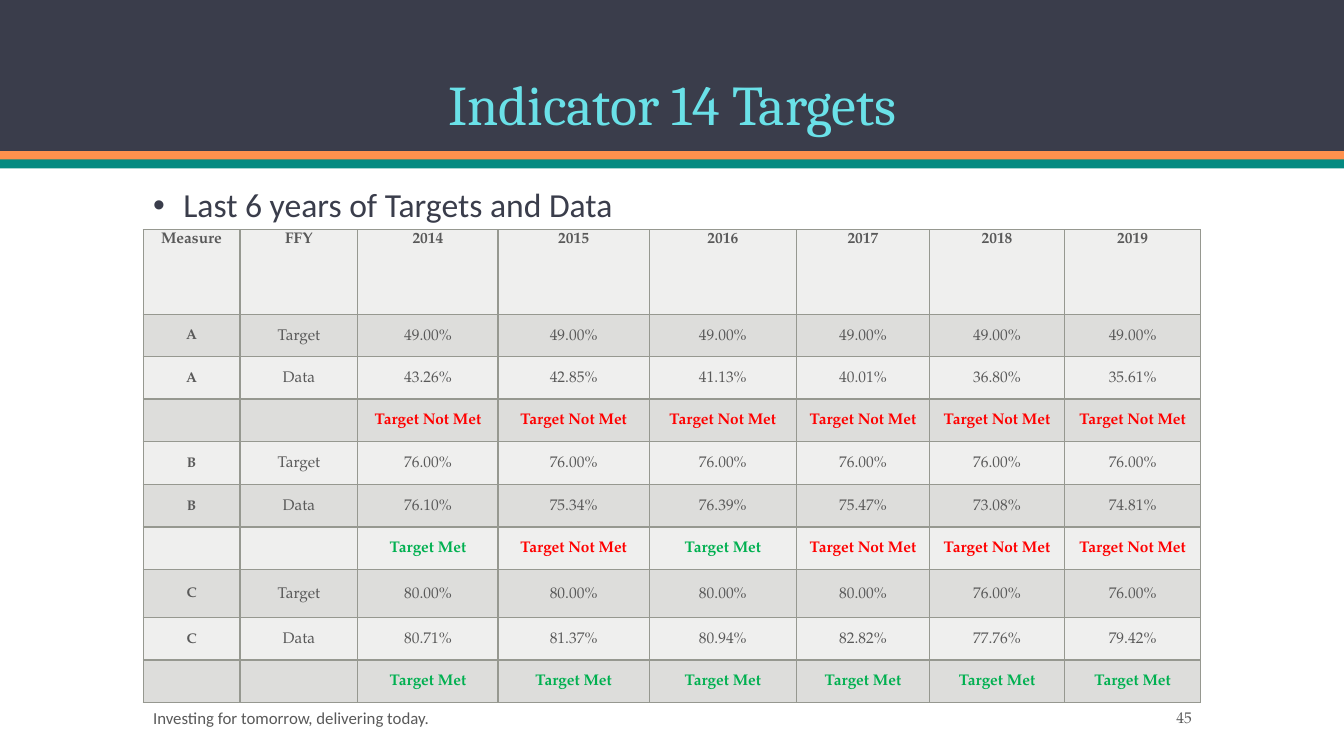
from dataclasses import dataclass

from lxml import etree
from pptx import Presentation
from pptx.dml.color import RGBColor
from pptx.enum.shapes import MSO_SHAPE
from pptx.enum.text import MSO_ANCHOR, PP_ALIGN
from pptx.oxml.ns import qn
from pptx.util import Inches, Pt

RECT = MSO_SHAPE.RECTANGLE
TOP, MIDDLE, BOTTOM = MSO_ANCHOR.TOP, MSO_ANCHOR.MIDDLE, MSO_ANCHOR.BOTTOM
LEFT, CENTER, RIGHT = PP_ALIGN.LEFT, PP_ALIGN.CENTER, PP_ALIGN.RIGHT


@dataclass(frozen=True)
class Theme:
    """Fonts, colours and type sizes of the slide."""

    title_font: str = "Cambria"
    body_font: str = "Calibri"
    table_font: str = "TeX Gyre Pagella"
    navy: str = "3A3D4B"
    orange: str = "FF914D"
    teal: str = "048A81"
    aqua: str = "6AE1E8"
    grey: str = "595959"
    border: str = "969890"
    bands: tuple = ("EFEFEE", "DDDDDB")
    met: str = "00B050"
    not_met: str = "FF0000"
    title_size: float = 40
    body_size: float = 24
    footer_size: float = 12
    table_size: float = 11
    measure_size: float = 10


MARGIN, WIDTH = 1.42, 10.5
COLS = [0.96, 1.17, 1.39, 1.5, 1.46, 1.32, 1.34, 1.35]
ROWS = [0.84, 0.42, 0.42, 0.42, 0.43, 0.42, 0.42, 0.48, 0.42, 0.42]
YEARS = range(2014, 2020)
MEASURES = {
    "A": ([49] * 6, [43.26, 42.85, 41.13, 40.01, 36.80, 35.61]),
    "B": ([76] * 6, [76.10, 75.34, 76.39, 75.47, 73.08, 74.81]),
    "C": ([80] * 4 + [76] * 2, [80.71, 81.37, 80.94, 82.82, 77.76, 79.42]),
}


class Deck:
    """Draws elements on the current slide in one theme."""

    def __init__(self, theme):
        self.theme = theme
        self.prs = Presentation()
        self.prs.slide_width, self.prs.slide_height = Inches(13.33), Inches(7.5)
        self.slide = self.prs.slides.add_slide(self.prs.slide_layouts[6])

    def bar(self, y, h, color):
        """Add a full-width bar."""
        sp = self.slide.shapes.add_shape(
            RECT, 0, Inches(y), self.prs.slide_width, Inches(h))
        sp.shadow.inherit = False
        sp.fill.solid()
        sp.fill.fore_color.rgb = RGBColor.from_string(color)
        sp.line.fill.background()

    def format(self, p, font, size, color, align=LEFT, bold=False):
        """Style a paragraph and its runs."""
        p.alignment = align
        for r in p.runs:
            r.font.name, r.font.size, r.font.bold = font, Pt(size), bold
            r.font.color.rgb = RGBColor.from_string(color)

    def text(self, box, text, font, size, color, align=LEFT, anchor=MIDDLE):
        """Add a one-paragraph text box and return its paragraph."""
        tf = self.slide.shapes.add_textbox(*map(Inches, box)).text_frame
        tf.word_wrap, tf.vertical_anchor = True, anchor
        tf.text = text
        p = tf.paragraphs[0]
        self.format(p, font, size, color, align)
        return p

    def bullet(self, p, indent):
        """Give a paragraph a hanging bullet."""
        pPr = p._p.get_or_add_pPr()
        pPr.set("marL", str(Inches(indent)))
        pPr.set("indent", str(-Inches(indent)))
        etree.SubElement(pPr, qn("a:buFont"), typeface="Arial")
        etree.SubElement(pPr, qn("a:buChar"), char="•")

    def borders(self, cell):
        """Outline a cell on all four sides."""
        tcPr = cell._tc.get_or_add_tcPr()
        for side in "LRTB":
            ln = etree.SubElement(tcPr, qn(f"a:ln{side}"), w=str(Pt(1)))
            fill = etree.SubElement(ln, qn("a:solidFill"))
            etree.SubElement(fill, qn("a:srgbClr"), val=self.theme.border)

    def cell(self, cell, text, fill, anchor, size, color, bold):
        """Fill, outline and write one table cell."""
        self.borders(cell)
        cell.fill.solid()
        cell.fill.fore_color.rgb = RGBColor.from_string(fill)
        cell.vertical_anchor = anchor
        cell.margin_left = cell.margin_right = Inches(0.07)
        cell.margin_top = cell.margin_bottom = 0
        cell.text_frame.text = text
        p = cell.text_frame.paragraphs[0]
        p.line_spacing, p.space_before, p.space_after = 1.15, Pt(3), Pt(3)
        self.format(p, self.theme.table_font, size, color, CENTER, bold)

    def table(self, x, y, rows):
        """Add the banded table of targets and data."""
        t = self.theme
        verdicts = {"Target Met": t.met, "Target Not Met": t.not_met}
        tbl = self.slide.shapes.add_table(
            len(ROWS), len(COLS), Inches(x), Inches(y),
            Inches(WIDTH), Inches(sum(ROWS))).table
        tbl.first_row = tbl.horz_banding = False
        for col, w in zip(tbl.columns, COLS):
            col.width = Inches(w)
        for row, h in zip(tbl.rows, ROWS):
            row.height = Inches(h)
        for i, row in enumerate(rows):
            for j, text in enumerate(row):
                self.cell(
                    tbl.cell(i, j), text, t.bands[i % 2],
                    MIDDLE if i else TOP,
                    t.measure_size if i and j == 0 else t.table_size,
                    verdicts.get(text, t.grey),
                    i == 0 or j == 0 or text in verdicts)


def target_rows():
    """Return the table text, judging each year's data against its target."""
    rows = [["Measure", "FFY", *map(str, YEARS)]]
    for name, (targets, data) in MEASURES.items():
        rows.append([name, "Target", *(f"{v:.2f}%" for v in targets)])
        rows.append([name, "Data", *(f"{v:.2f}%" for v in data)])
        rows.append(["", "", *("Target Met" if d >= g else "Target Not Met"
                               for g, d in zip(targets, data))])
    return rows


def main():
    """Build and save the slide."""
    t = Theme()
    deck = Deck(t)
    deck.bar(0, 1.5, t.navy)
    deck.bar(1.5, 0.09, t.orange)
    deck.bar(1.58, 0.09, t.teal)
    p = deck.text((MARGIN, 0.28, WIDTH, 1.13), "Indicator 14 Targets",
                  t.title_font, t.title_size, t.aqua, CENTER, BOTTOM)
    p.line_spacing = 0.9
    p = deck.text((MARGIN, 1.82, WIDTH, 4.75), "Last 6 years of Targets and Data",
                  t.body_font, t.body_size, t.navy, anchor=TOP)
    p.line_spacing, p.space_before = 0.9, Pt(18)
    deck.bullet(p, 0.3)
    deck.text((MARGIN, 6.97, 6.83, 0.3), "Investing for tomorrow, delivering today.",
              t.body_font, t.footer_size, t.grey)
    deck.text((10.42, 6.97, 1.5, 0.3), "45",
              t.table_font, t.table_size, t.grey, RIGHT)
    deck.table(MARGIN, 2.28, target_rows())
    deck.prs.save("out.pptx")


if __name__ == "__main__":
    main()
